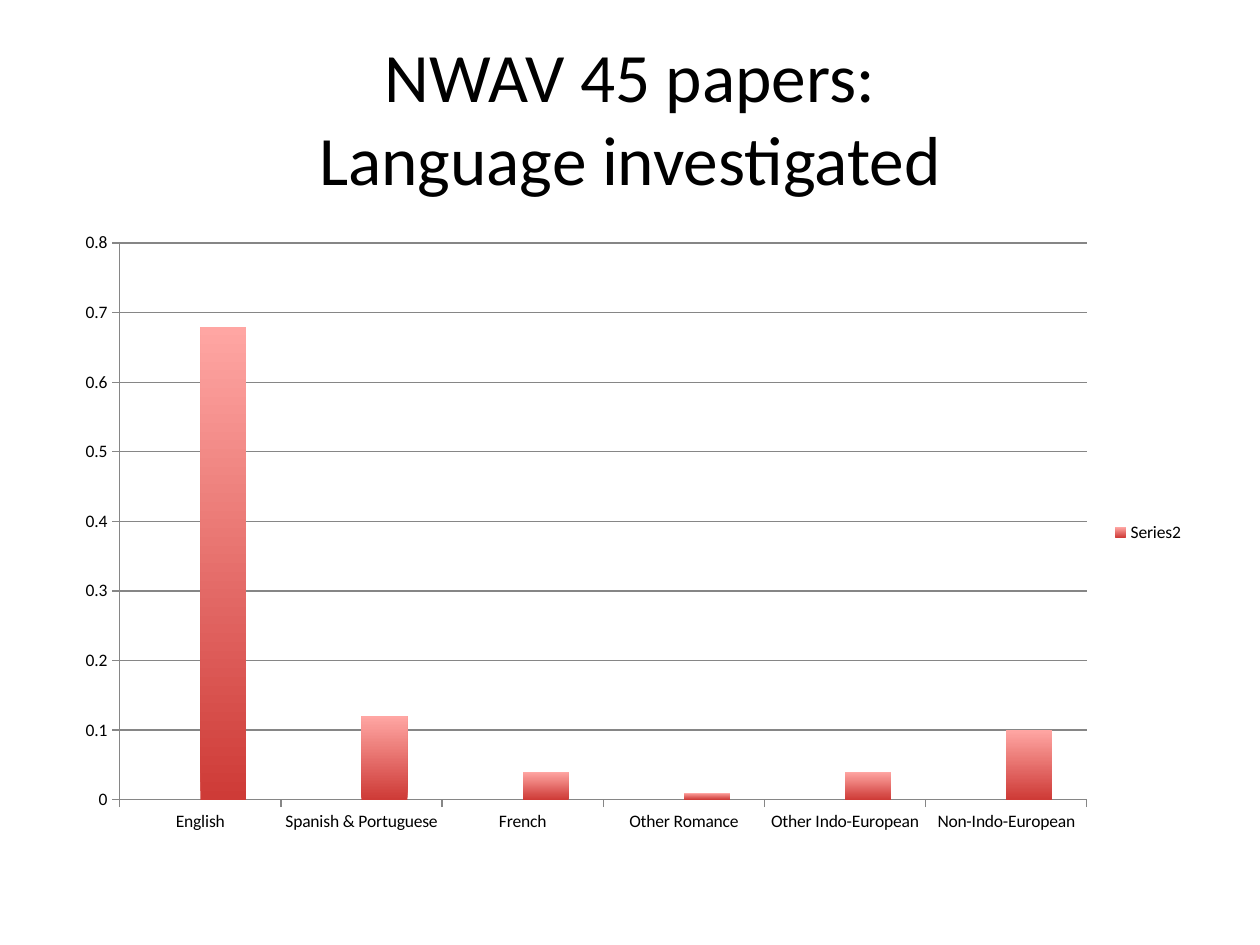
from lxml.etree import SubElement
from pptx import Presentation
from pptx.chart.data import CategoryChartData
from pptx.dml.color import RGBColor
from pptx.enum.chart import XL_CHART_TYPE, XL_LEGEND_POSITION, XL_TICK_MARK
from pptx.enum.text import MSO_ANCHOR, PP_ALIGN
from pptx.oxml.ns import qn
from pptx.util import Cm, Pt

FONT = "Calibri"
SHARES = {
    "English": 0.68,
    "Spanish & Portuguese": 0.12,
    "French": 0.04,
    "Other Romance": 0.01,
    "Other Indo-European": 0.04,
    "Non-Indo-European": 0.1,
}


def color(hex_string):
    """Return the colour for a hex string."""
    return RGBColor.from_string(hex_string)


def style_font(font, size):
    """Set the slide's typeface, text colour and a size."""
    font.name = FONT
    font.size = Pt(size)
    font.color.rgb = color("000000")


def add_title(slide, text, left, top, width, height):
    """Add a centred title in the given box."""
    shape = slide.shapes.add_textbox(left, top, width, height)
    frame = shape.text_frame
    frame.word_wrap = True
    frame.vertical_anchor = MSO_ANCHOR.MIDDLE
    paragraph = frame.paragraphs[0]
    paragraph.text = text
    paragraph.alignment = PP_ALIGN.CENTER
    style_font(paragraph.font, 39.6)


def style_axis(axis):
    """Give an axis a thin grey line and outward ticks."""
    axis.major_tick_mark = XL_TICK_MARK.OUTSIDE
    axis.minor_tick_mark = XL_TICK_MARK.NONE
    axis.format.line.color.rgb = color("868686")
    axis.format.line.width = Pt(0.75)


def hide_legend_entry(legend, index):
    """Hide one series from the legend."""
    entry = SubElement(legend._element, qn("c:legendEntry"))
    SubElement(entry, qn("c:idx")).set("val", str(index))
    SubElement(entry, qn("c:delete")).set("val", "1")
    legend._element.find(qn("c:legendPos")).addnext(entry)


def add_share_chart(slide, left, top, width, height):
    """Add the column chart of languages in the given box."""
    data = CategoryChartData()
    data.categories = list(SHARES)
    data.add_series("Series 1", [None] * len(SHARES))
    data.add_series("Series2", list(SHARES.values()))
    chart = slide.shapes.add_chart(
        XL_CHART_TYPE.COLUMN_CLUSTERED, left, top, width, height, data
    ).chart
    style_font(chart.font, 10)
    chart.has_title = False

    chart.has_legend = True
    chart.legend.position = XL_LEGEND_POSITION.RIGHT
    chart.legend.include_in_layout = False
    hide_legend_entry(chart.legend, 0)

    style_axis(chart.category_axis)
    value_axis = chart.value_axis
    style_axis(value_axis)
    value_axis.minimum_scale, value_axis.maximum_scale = 0, 0.8
    value_axis.major_unit = 0.1
    value_axis.tick_labels.number_format = "General"
    value_axis.tick_labels.number_format_is_linked = False
    grid_line = value_axis.major_gridlines.format.line
    grid_line.color.rgb = color("868686")
    grid_line.width = Pt(0.75)

    plot = chart.plots[0]
    plot.gap_width = 150
    plot.vary_by_categories = False
    empty_series, share_series = plot.series
    empty_series.format.fill.solid()
    empty_series.format.fill.fore_color.rgb = color("4F81BD")
    fill = share_series.format.fill
    fill.gradient()
    fill.gradient_angle = 90
    for stop, shade in zip(fill.gradient_stops, ("CE3B37", "FFA6A3")):
        stop.color.rgb = color(shade)


def main():
    """Build and save the slide."""
    presentation = Presentation()
    presentation.slide_width = Cm(25.4)
    presentation.slide_height = Cm(19.05)
    slide = presentation.slides.add_slide(presentation.slide_layouts[6])
    left, width = Cm(1.27), Cm(22.86)
    title = "NWAV 45 papers:\vLanguage investigated"
    add_title(slide, title, left, Cm(0.76), width, Cm(3.18))
    add_share_chart(slide, left, Cm(4.45), width, Cm(12.57))
    presentation.save("out.pptx")


if __name__ == "__main__":
    main()
